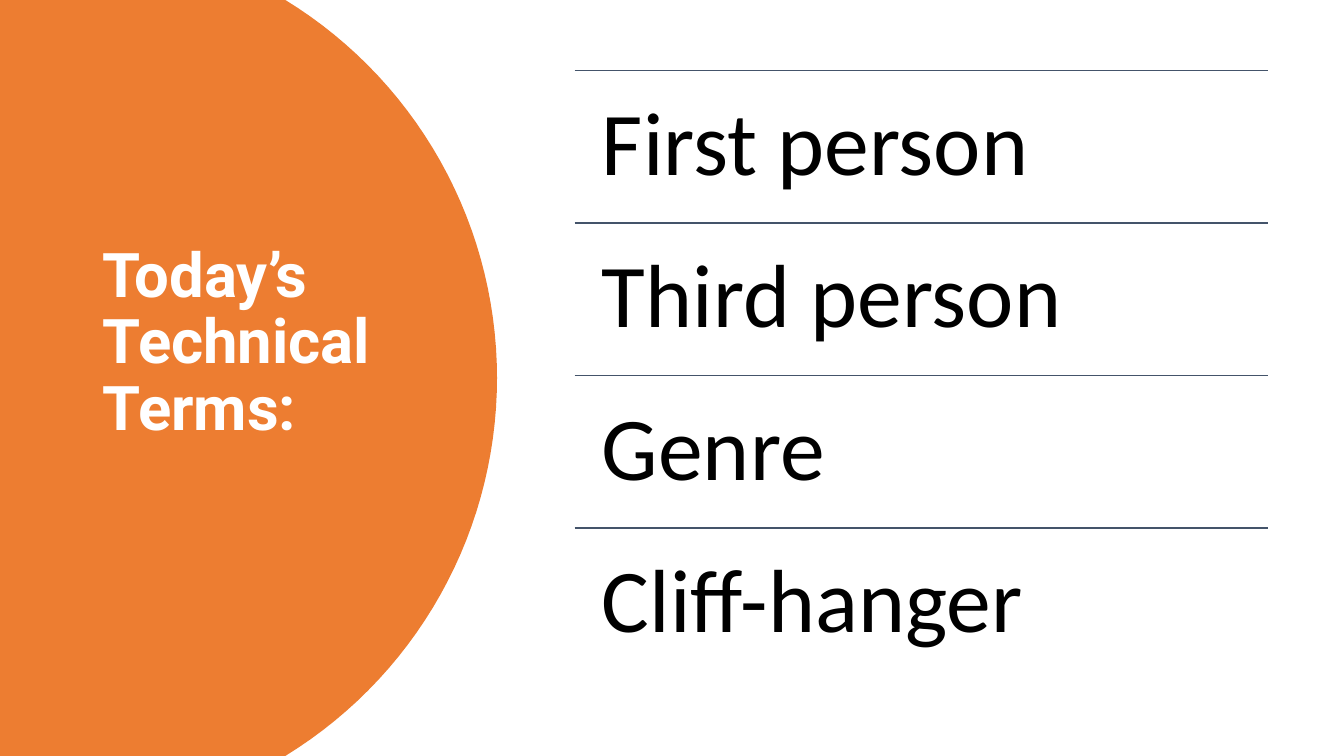
from math import asin, cos, sin

from lxml.etree import SubElement
from pptx import Presentation
from pptx.dml.color import RGBColor
from pptx.enum.shapes import MSO_CONNECTOR
from pptx.enum.text import MSO_ANCHOR
from pptx.oxml.ns import qn
from pptx.util import Inches, Pt

SLIDE_WIDTH, SLIDE_HEIGHT = 13.33, 7.5
TERMS = ["First person", "Third person", "Genre", "Cliff-hanger"]


def color(hex_code):
    """Turn a hex string into a colour."""
    return RGBColor.from_string(hex_code)


def add_text(slide, box, wording, font_name, size, hex_code, bold=False):
    """Place wrapped text in a box and return its text frame."""
    frame = slide.shapes.add_textbox(*map(Inches, box)).text_frame
    frame.word_wrap = True
    frame.text = wording
    paragraph = frame.paragraphs[0]
    paragraph.line_spacing = 0.9
    font = paragraph.runs[0].font
    font.name, font.size, font.bold = font_name, Pt(size), bold
    font.color.rgb = color(hex_code)
    return frame


def add_dome(slide, box, flat_width, steps=60):
    """Fill a box with a panel whose right side is a circular arc."""
    left, top, width, height = box
    bulge, half = width - flat_width, height / 2
    radius = (bulge ** 2 + half ** 2) / (2 * bulge)
    center_x, center_y = left + width - radius, top + half
    reach = asin(half / radius)
    angles = [reach * (2 * step / steps - 1) for step in range(steps + 1)]
    arc = [(Inches(center_x + radius * cos(angle)),
            Inches(center_y + radius * sin(angle))) for angle in angles]
    outline = slide.shapes.build_freeform(Inches(left), Inches(top))
    outline.add_line_segments(arc + [(Inches(left), Inches(top + height))])
    dome = outline.convert_to_shape()
    dome.shadow.inherit = False
    dome.fill.solid()
    dome.fill.fore_color.rgb = color("ED7D31")
    dome.line.fill.background()


def add_title(slide, box):
    """Write the heading slightly above the middle of its box."""
    frame = add_text(slide, box, "Today’s Technical Terms:", "Roboto", 44, "FFFFFF", True)
    frame.vertical_anchor = MSO_ANCHOR.MIDDLE
    frame.margin_bottom = Inches(0.72)


def add_rule(slide, left, top, width):
    """Draw a thin horizontal rule."""
    rule = slide.shapes.add_connector(
        MSO_CONNECTOR.STRAIGHT, *map(Inches, (left, top, left + width, top)))
    rule.line.color.rgb = color("44546A")
    rule.line.width = Pt(1)
    SubElement(rule._element.spPr, qn("a:effectLst"))


def add_terms(slide, box, terms):
    """List the terms in equal rows, each under a rule."""
    left, top, width, height = box
    row_height = height / len(terms)
    for row, term in enumerate(terms):
        row_top = top + row * row_height
        add_rule(slide, left, row_top, width)
        frame = add_text(slide, (left, row_top, width, row_height), term, "Calibri", 64, "000000")
        frame.margin_left = frame.margin_right = Inches(0.27)
        frame.margin_top = frame.margin_bottom = Inches(0.27)


def main():
    """Build and save the slide."""
    deck = Presentation()
    deck.slide_width, deck.slide_height = Inches(SLIDE_WIDTH), Inches(SLIDE_HEIGHT)
    slide = deck.slides.add_slide(deck.slide_layouts[6])
    add_dome(slide, (0, 0, 4.93, SLIDE_HEIGHT), 2.83)
    add_title(slide, (0.92, 0.7, 3.23, 6.09))
    add_terms(slide, (5.7, 0.7, 6.88, 6.05), TERMS)
    deck.save("out.pptx")


if __name__ == "__main__":
    main()
